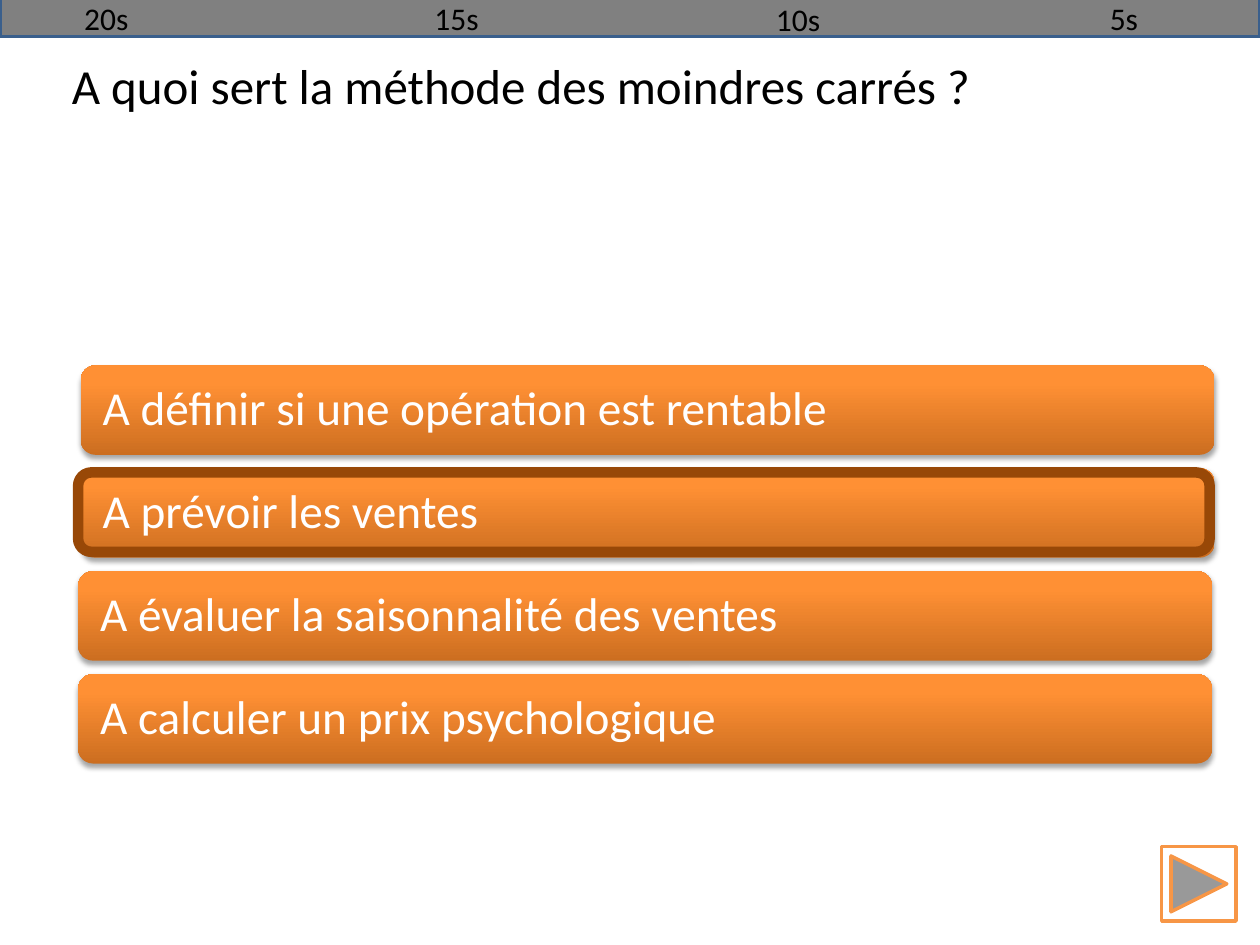
import pptx
import pptx.dml.color
import pptx.enum.shapes
import pptx.enum.text
import pptx.oxml
import pptx.oxml.ns
import pptx.util

Inches = pptx.util.Inches
Pt = pptx.util.Pt
SHAPES = pptx.enum.shapes.MSO_SHAPE
ANCHOR = pptx.enum.text.MSO_ANCHOR
ALIGN = pptx.enum.text.PP_ALIGN

FONT = "Calibri"
COLOURS = {
    "text": "000000",
    "answer_text": "FFFFFF",
    "answer_low": "CC6E20",
    "answer_mid": "FF9034",
    "answer_high": "FF9136",
    "correct": "984807",
    "button": "FFFFFF",
    "button_line": "F79646",
    "timer": "808080",
    "timer_line": "3A5F8C",
}
ANSWERS = [
    "A définir si une opération est rentable",
    "A prévoir les ventes",
    "A évaluer la saisonnalité des ventes",
    "A calculer un prix psychologique",
]
TIMES = [("20s", 0.57, -0.06), ("15s", 3.35, -0.06), ("10s", 6.06, -0.05), ("5s", 8.71, -0.06)]


def colour(name):
    """Return the named colour as an RGB value."""
    return pptx.dml.color.RGBColor.from_string(COLOURS[name])


def write(paragraph, text, size, colour_name):
    """Add one left-aligned run to a paragraph."""
    paragraph.alignment = ALIGN.LEFT
    run = paragraph.add_run()
    run.text = text
    run.font.name = FONT
    run.font.size = Pt(size)
    run.font.color.rgb = colour(colour_name)


def add_box(slide, preset, box, fill=None, line=None, width=2):
    """Add a preset shape without shadow, with optional fill and line."""
    shape = slide.shapes.add_shape(preset, *map(Inches, box))
    shape.shadow.inherit = False
    if fill:
        shape.fill.solid()
        shape.fill.fore_color.rgb = colour(fill)
    else:
        shape.fill.background()
    if line:
        shape.line.color.rgb = colour(line)
        shape.line.width = Pt(width)
    else:
        shape.line.fill.background()
    return shape


def add_gloss(shape):
    """Give a shape the orange gradient and the soft shadow of an answer."""
    namespace = pptx.oxml.ns.nsdecls("a")
    stops = "".join(
        f'<a:gs pos="{position * 1000}"><a:srgbClr val="{COLOURS[name]}"/></a:gs>'
        for position, name in [(0, "answer_low"), (80, "answer_mid"), (100, "answer_high")]
    )
    gradient = pptx.oxml.parse_xml(
        f'<a:gradFill {namespace} rotWithShape="1"><a:gsLst>{stops}</a:gsLst>'
        '<a:lin ang="16200000" scaled="0"/></a:gradFill>'
    )
    shadow = pptx.oxml.parse_xml(
        f'<a:outerShdw {namespace} blurRad="{Pt(3.1)}" dist="{Pt(1.8)}" dir="5400000" rotWithShape="0">'
        '<a:srgbClr val="000000"><a:alpha val="35000"/></a:srgbClr></a:outerShdw>'
    )
    properties = shape.element.spPr
    properties.replace(properties.find(pptx.oxml.ns.qn("a:noFill")), gradient)
    properties.find(pptx.oxml.ns.qn("a:effectLst")).append(shadow)


def add_question(slide, box, text):
    """Place the question in the title placeholder."""
    title = slide.shapes.title
    title.left, title.top, title.width, title.height = map(Inches, box)
    frame = title.text_frame
    frame.word_wrap = True
    frame.auto_size = pptx.enum.text.MSO_AUTO_SIZE.NONE
    frame.vertical_anchor = ANCHOR.TOP
    write(frame.paragraphs[0], text, 28, "text")


def add_answers(slide, box, answers):
    """Stack glossy answer bars at equal steps, two to a block."""
    left, top, width, height = box
    bar_height = 0.71
    step = (height - bar_height) / (len(answers) - 1)
    for index, answer in enumerate(answers):
        bar_left = left - 0.02 * (index // 2)
        bar = add_box(slide, SHAPES.ROUNDED_RECTANGLE, (bar_left, top + index * step, width, bar_height))
        add_gloss(bar)
        frame = bar.text_frame
        frame.word_wrap = True
        frame.vertical_anchor = ANCHOR.MIDDLE
        frame.margin_left = frame.margin_right = Inches(0.14)
        paragraph = frame.paragraphs[0]
        paragraph.line_spacing = 0.9
        write(paragraph, answer, 27, "answer_text")


def add_timer(slide, box, times):
    """Draw the countdown bar with its time marks."""
    add_box(slide, SHAPES.RECTANGLE, box, "timer", "timer_line")
    for text, left, top in times:
        width = 0.63 if len(text) == 3 else 0.47
        mark = slide.shapes.add_textbox(Inches(left), Inches(top), Inches(width), Inches(0.4))
        mark.text_frame.word_wrap = True
        write(mark.text_frame.paragraphs[0], text, 18, "text")


def add_next_button(slide, box):
    """Draw the button that leads to the next question."""
    button = add_box(slide, SHAPES.ACTION_BUTTON_BACK_OR_PREVIOUS, box, "button", "button_line")
    button.rotation = 180


def main():
    """Build and save the quiz slide."""
    presentation = pptx.Presentation()
    presentation.slide_width = Inches(10)
    presentation.slide_height = Inches(7.5)
    slide = presentation.slides.add_slide(presentation.slide_layouts[5])
    add_question(slide, (0.47, 0.39, 9, 1.22), "A quoi sert la méthode des moindres carrés ?")
    add_answers(slide, (0.64, 2.9, 9, 3.16), ANSWERS)
    add_box(slide, SHAPES.ROUNDED_RECTANGLE, (0.62, 3.75, 8.98, 0.63), line="correct", width=6)
    add_next_button(slide, (9.22, 6.72, 0.59, 0.59))
    add_timer(slide, (0, -0.02, 10, 0.31), TIMES)
    presentation.save("out.pptx")


if __name__ == "__main__":
    main()
